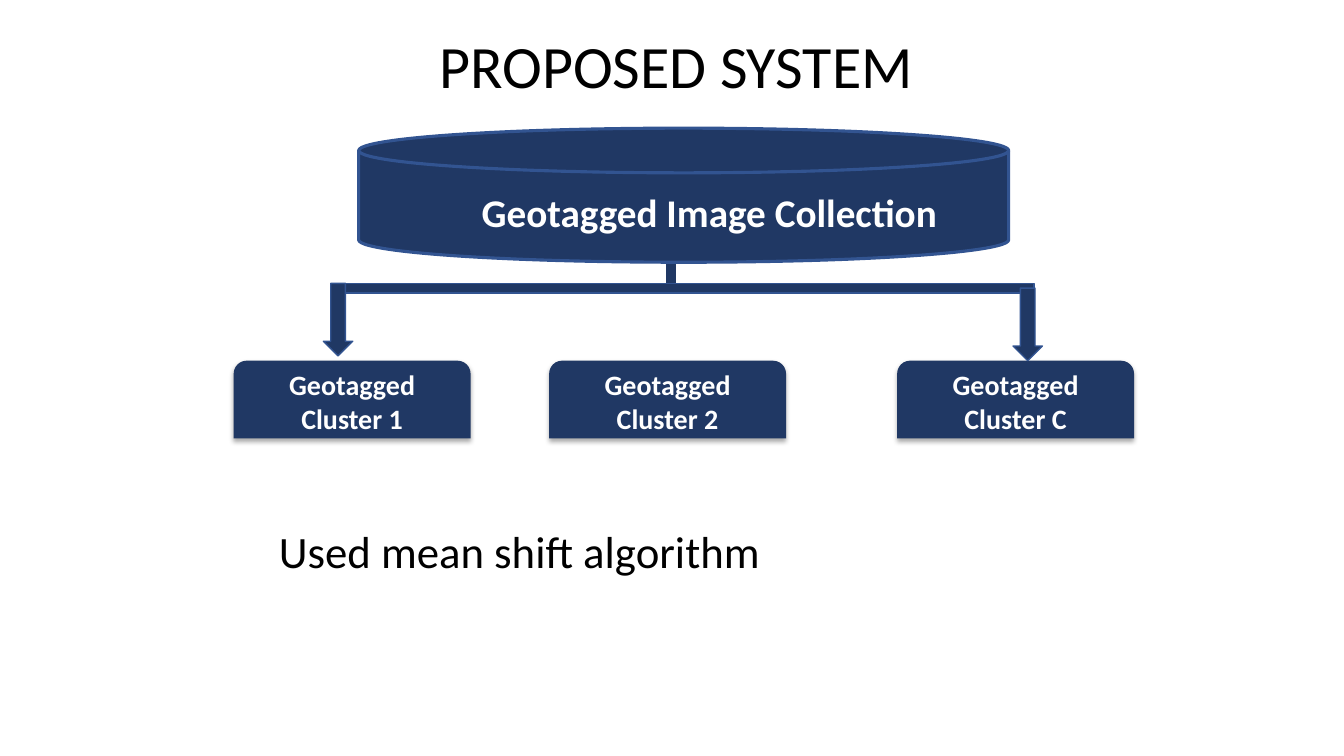
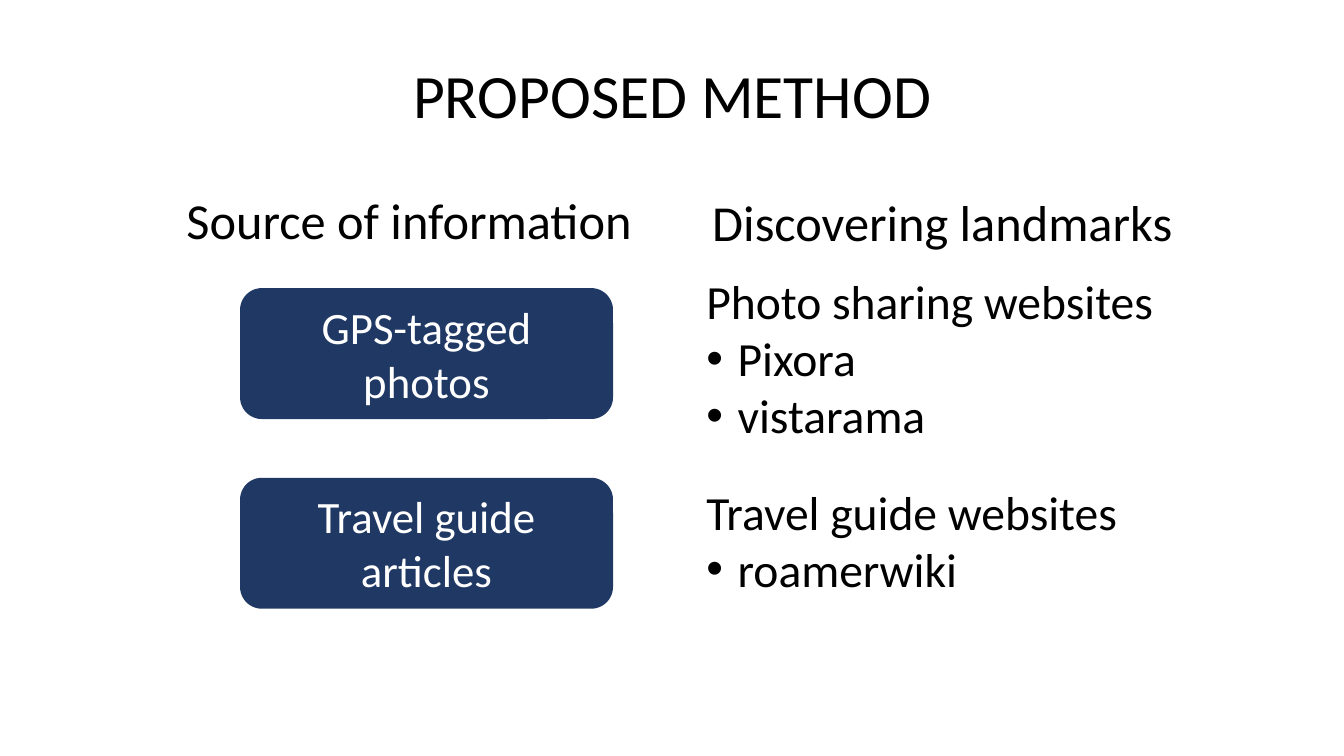
from dataclasses import dataclass

from lxml import etree
from pptx import Presentation
from pptx.dml.color import RGBColor
from pptx.enum.shapes import MSO_SHAPE
from pptx.enum.text import MSO_ANCHOR, PP_ALIGN
from pptx.oxml.ns import qn
from pptx.util import Cm, Pt

BAR = MSO_SHAPE.RECTANGLE
ARROW = MSO_SHAPE.DOWN_ARROW
DISK = MSO_SHAPE.FLOWCHART_MAGNETIC_DISK
CLUSTER = MSO_SHAPE.ROUND_2_SAME_RECTANGLE
SOURCE = MSO_SHAPE.ROUNDED_RECTANGLE
LEFT, CENTER = PP_ALIGN.LEFT, PP_ALIGN.CENTER
TOP, MIDDLE = MSO_ANCHOR.TOP, MSO_ANCHOR.MIDDLE


@dataclass(frozen=True)
class Theme:
    font: str = "Calibri"
    navy: RGBColor = RGBColor(0x20, 0x38, 0x64)
    edge: RGBColor = RGBColor(0x32, 0x54, 0x91)
    ink: RGBColor = RGBColor(0, 0, 0)
    paper: RGBColor = RGBColor(255, 255, 255)
    heading: float = 36
    listing: float = 34
    body: float = 32
    collection: float = 28
    cluster: float = 20


THEME = Theme()

# Boxes are (left, top, width, height) in centimetres.
SYSTEM_TITLE = ("PROPOSED SYSTEM", (1.8, 0.79, 30.48, 1.91), 42.9)
METHOD_TITLE = ("PROPOSED METHOD", (2.34, 1.02, 29.21, 2.92), 44)

COLLECTION = "Geotagged Image Collection"
CLUSTERS = [
    ("Geotagged Cluster 1", 5.89),
    ("Geotagged Cluster 2", 13.84),
    ("Geotagged Cluster C", 22.61),
]
ARROWS = [(8.15, 7.14), (25.53, 7.26)]
ALGORITHM = "Used mean shift algorithm"

HEADINGS = [
    ("Source of information", 4.45, 4.65),
    ("Discovering landmarks", 17.7, 4.7),
]
SOURCES = [("GPS-tagged photos", 7.26), ("Travel guide articles", 12.04)]
WEBSITES = [
    ("Photo sharing websites", ["Pixora", "vistarama"], 6.73),
    ("Travel guide websites", ["roamerwiki"], 12.04),
]
LINE_HEIGHT = 1.46
LIST_INDENT, BULLET_INDENT, BULLET_HANG = 1.27, 2.06, -0.79


def place(box):
    return [Cm(length) for length in box]


def write(shape, lines, size, color=THEME.ink, align=LEFT, anchor=TOP,
          bold=False, spacing=None):
    frame = shape.text_frame
    frame.word_wrap = True
    frame.vertical_anchor = anchor
    for index, line in enumerate(lines):
        paragraph = frame.add_paragraph() if index else frame.paragraphs[0]
        paragraph.alignment = align
        if spacing:
            paragraph.line_spacing = spacing
        run = paragraph.add_run()
        run.text = line
        run.font.color.rgb = color
        formats = {"name": THEME.font, "size": Pt(size), "bold": bold}
        for name, value in formats.items():
            setattr(run.font, name, value)
    return frame.paragraphs


def add_text(slide, box, lines, size, **style):
    return write(slide.shapes.add_textbox(*place(box)), lines, size, **style)


def add_navy(slide, kind, box, line=None, line_width=1):
    shape = slide.shapes.add_shape(kind, *place(box))
    shape.shadow.inherit = False
    shape.fill.solid()
    shape.fill.fore_color.rgb = THEME.navy
    if line is None:
        shape.line.fill.background()
    else:
        shape.line.color.rgb = line
        shape.line.width = Pt(line_width)
    return shape


def add_soft_shadow(shape):
    effects = shape._element.spPr.find(qn("a:effectLst"))
    shadow = etree.SubElement(
        effects, qn("a:outerShdw"), blurRad=str(Pt(3.5)), dist=str(Pt(2.2)),
        dir="5400000", rotWithShape="0")
    color = etree.SubElement(shadow, qn("a:srgbClr"), val="000000")
    etree.SubElement(color, qn("a:alpha"), val="32000")


def indent(paragraph, margin, first=0.0, bullet=None):
    properties = paragraph._p.get_or_add_pPr()
    properties.set("marL", str(Cm(margin)))
    properties.set("indent", str(Cm(first)))
    if bullet:
        etree.SubElement(properties, qn("a:buFont"), typeface="Arial")
        etree.SubElement(properties, qn("a:buChar"), char=bullet)


def add_slide(deck, title):
    slide = deck.slides.add_slide(deck.slide_layouts[6])
    text, box, size = title
    add_text(slide, box, [text], size, align=CENTER, anchor=MIDDLE, spacing=0.9)
    return slide


def build_system(deck):
    slide = add_slide(deck, SYSTEM_TITLE)
    add_navy(slide, BAR, (16.81, 6.07, 0.2, 1.07), THEME.navy)
    for name, left in CLUSTERS:
        cluster = add_navy(slide, CLUSTER, (left, 9.09, 5.97, 1.96))
        add_soft_shadow(cluster)
        write(cluster, [name], THEME.cluster, color=THEME.paper, align=CENTER,
              anchor=MIDDLE, bold=True)
    add_navy(slide, BAR, (8.43, 7.14, 17.63, 0.25), THEME.edge)
    for left, top in ARROWS:
        add_navy(slide, ARROW, (left, top, 0.74, 1.83), THEME.edge)
    add_navy(slide, DISK, (9.04, 3.23, 16.38, 3.38), THEME.edge, 2.25)
    add_text(slide, (11.89, 4.62, 12.12, 1.45), [COLLECTION],
             THEME.collection, color=THEME.paper, bold=True)
    add_text(slide, (6.78, 13.08, 12.8, 1.63), [ALGORITHM], THEME.body)


def build_method(deck):
    slide = add_slide(deck, METHOD_TITLE)
    for heading, left, top in HEADINGS:
        add_text(slide, (left, top, 13.67, 1.8), [heading], THEME.heading)
    for source, top in SOURCES:
        box = add_navy(slide, SOURCE, (6.05, top, 9.4, 3.3))
        write(box, [source], THEME.body, color=THEME.paper, align=CENTER)
    for kind, sites, top in WEBSITES:
        lines = [kind, *sites]
        height = LINE_HEIGHT * len(lines) + 0.25
        first, *rest = add_text(slide, (16.28, top, 13.13, height), lines,
                                THEME.listing)
        indent(first, LIST_INDENT)
        for site in rest:
            indent(site, BULLET_INDENT, BULLET_HANG, "•")


def main():
    deck = Presentation()
    deck.slide_width, deck.slide_height = Cm(33.87), Cm(19.05)
    build_system(deck)
    build_method(deck)
    deck.save("out.pptx")


if __name__ == "__main__":
    main()
